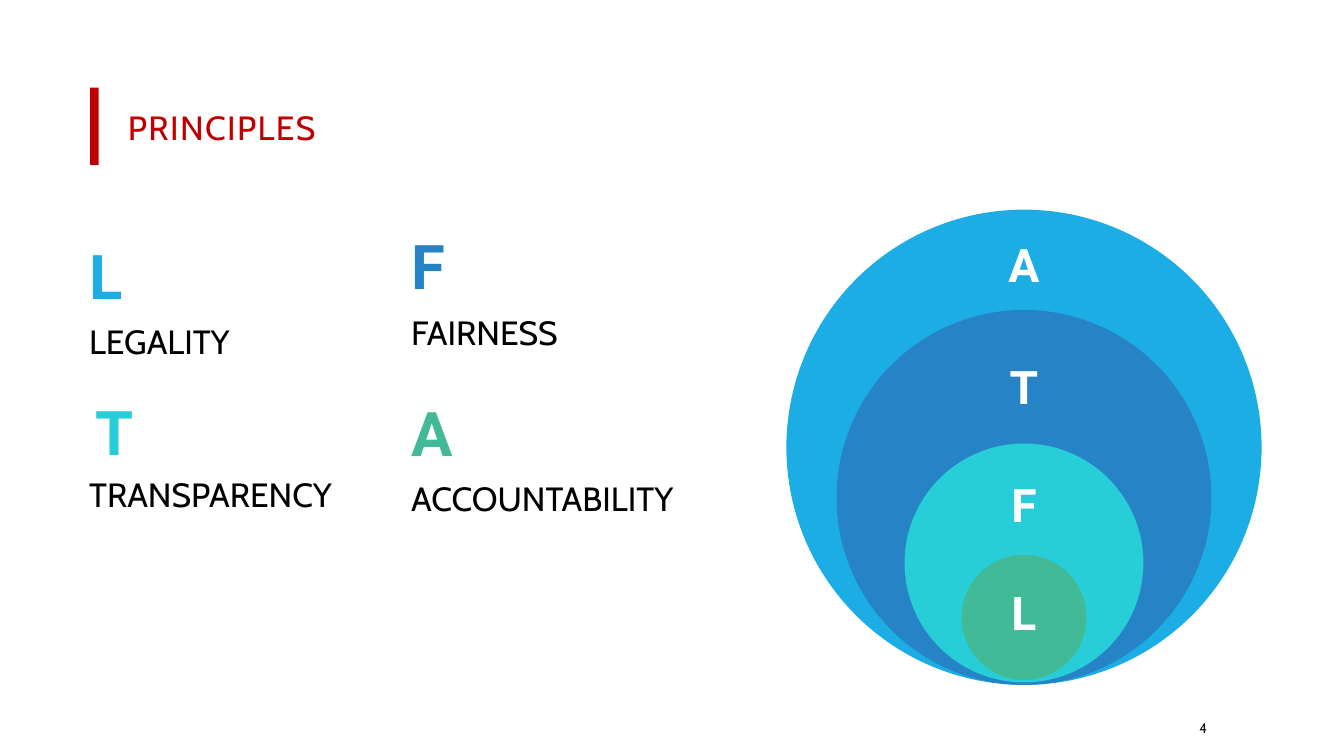
from pptx import Presentation
from pptx.dml.color import RGBColor
from pptx.enum.shapes import MSO_SHAPE
from pptx.enum.text import MSO_ANCHOR, MSO_AUTO_SIZE, PP_ALIGN
from pptx.util import Emu, Pt

PX = 9144  # EMU per px, 100 px to the inch
SLIDE_SIZE = (2667, 1500)

OVAL, RECTANGLE = MSO_SHAPE.OVAL, MSO_SHAPE.RECTANGLE
TOP, MIDDLE = MSO_ANCHOR.TOP, MSO_ANCHOR.MIDDLE
LEFT, CENTER = PP_ALIGN.LEFT, PP_ALIGN.CENTER
GROW, FIXED = MSO_AUTO_SIZE.SHAPE_TO_FIT_TEXT, MSO_AUTO_SIZE.NONE

BODY_FONT, LETTER_FONT = "Cabin", "Roboto"
RED, BLACK, WHITE = "C00000", "000000", "FFFFFF"
SKY, BLUE, TURQUOISE, GREEN = "1CADE4", "2683C6", "27CED7", "42BA97"

TITLE = "PRINCIPLES"
PAGE_NUMBER = "4"

# word, colour, letter (left, top, width), word (left, top, width)
PRINCIPLES = [
    ("LEGALITY", SKY, (167, 466, 158), (167, 632, 571)),
    ("FAIRNESS", BLUE, (806, 447, 158), (806, 613, 571)),
    ("TRANSPARENCY", TURQUOISE, (179, 776, 210), (167, 936, 759)),
    ("ACCOUNTABILITY", GREEN, (806, 777, 217), (806, 943, 784)),
]
LETTER_HEIGHT, WORD_HEIGHT = 158, 91

# letter, colour, diameter, bottom, top of letter
RINGS = [
    ("A", SKY, 943, 1359, 462),
    ("T", BLUE, 744, 1359, 704),
    ("F", TURQUOISE, 474, 1354, 939),
    ("L", GREEN, 248, 1349, 1152),
]
RING_CENTER = 2032
RING_LETTER_SIZE = (155, 125)


def rgb(color):
    return RGBColor.from_string(color)


def scaled(*lengths):
    return [Emu(int(length * PX)) for length in lengths]


def add_filled(shapes, preset, box, color):
    shape = shapes.add_shape(preset, *scaled(*box))
    shape.shadow.inherit = False
    shape.fill.solid()
    shape.fill.fore_color.rgb = rgb(color)
    shape.line.fill.background()


def add_text(shapes, text, box, *, size, color, font=BODY_FONT, bold=False,
             align=LEFT, anchor=TOP, insets=(10, 5), fit=GROW,
             line_spacing=None, tracking=None):
    """Add one line of text; insets are (sides, top and bottom), tracking in points."""
    frame = shapes.add_textbox(*scaled(*box)).text_frame
    frame.word_wrap = True
    frame.auto_size = fit
    frame.vertical_anchor = anchor
    frame.margin_left, frame.margin_top = scaled(*insets)
    frame.margin_right, frame.margin_bottom = scaled(*insets)
    paragraph = frame.paragraphs[0]
    paragraph.alignment = align
    paragraph.line_spacing = line_spacing
    run = paragraph.add_run()
    run.text = text
    run.font.name = font
    run.font.size = Pt(size)
    run.font.bold = bold
    run.font.color.rgb = rgb(color)
    if tracking:
        run._r.get_or_add_rPr().set("spc", str(tracking * 100))


def add_rings(shapes):
    rings = shapes.add_group_shape().shapes
    letter_width, letter_height = RING_LETTER_SIZE
    for letter, color, diameter, bottom, letter_top in RINGS:
        add_filled(rings, OVAL, (RING_CENTER - diameter / 2, bottom - diameter,
                                 diameter, diameter), color)
        add_text(rings, letter, (RING_CENTER - letter_width / 2, letter_top,
                                 letter_width, letter_height),
                 size=66, color=WHITE, font=LETTER_FONT, bold=True,
                 align=CENTER, insets=(13, 7))


def add_principles(shapes):
    for word, color, letter_place, word_place in PRINCIPLES:
        principle = shapes.add_group_shape().shapes
        add_text(principle, word, (*word_place, WORD_HEIGHT), size=48, color=BLACK)
        add_text(principle, word[0], (*letter_place, LETTER_HEIGHT), size=88,
                 color=color, font=LETTER_FONT, bold=True, anchor=MIDDLE)


def main():
    deck = Presentation()
    deck.slide_width, deck.slide_height = scaled(*SLIDE_SIZE)
    shapes = deck.slides.add_slide(deck.slide_layouts[6]).shapes
    add_text(shapes, PAGE_NUMBER, (2370, 1415, 213, 60), size=20, color="0D0D0D",
             anchor=MIDDLE, fit=FIXED)
    add_rings(shapes)
    add_principles(shapes)
    add_text(shapes, TITLE, (244, 95, 833, 328), size=48, color=RED,
             anchor=MIDDLE, fit=FIXED, line_spacing=0.8, tracking=2)
    add_filled(shapes, RECTANGLE, (179, 174, 17, 153), RED)
    deck.save("out.pptx")


if __name__ == "__main__":
    main()
